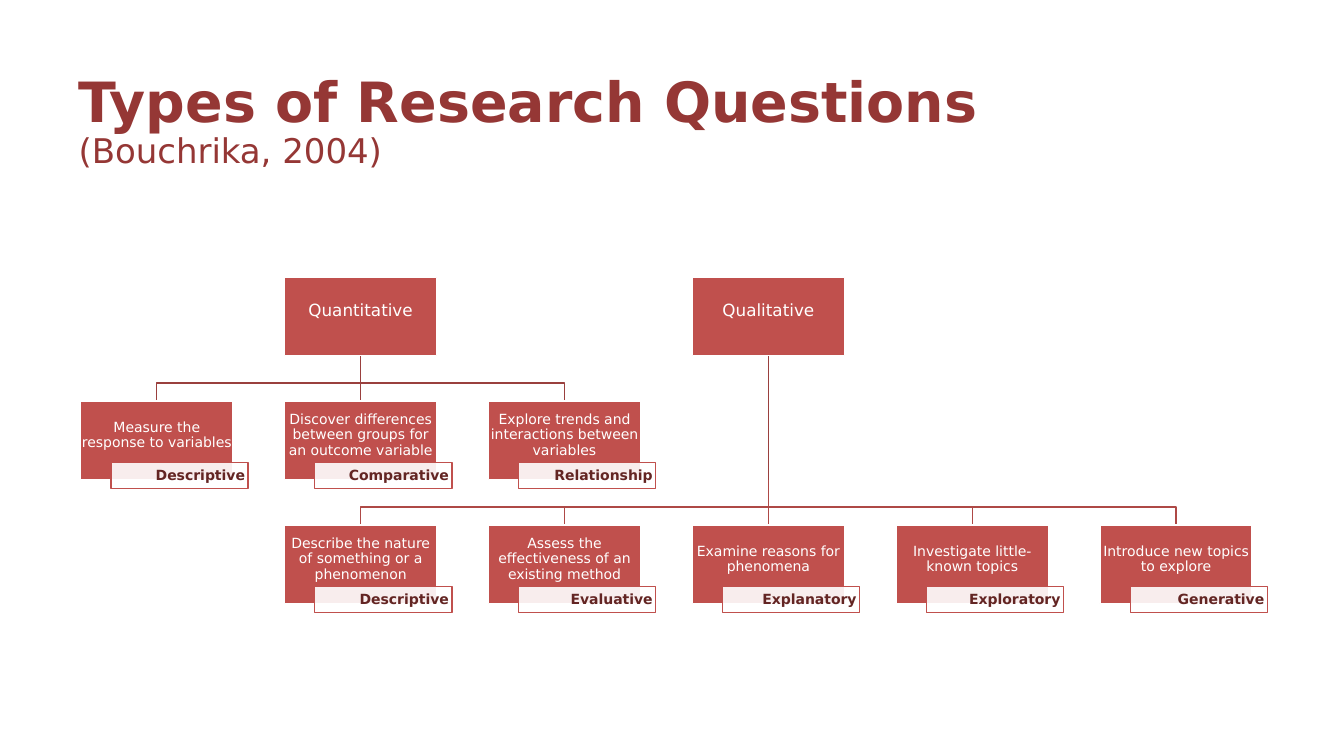
import pptx
import pptx.util
import pptx.dml.color
import pptx.enum.shapes
import pptx.enum.text
import pptx.oxml.ns
import lxml.etree

HUES = {"title": "953735", "box": "C0504D", "white": "FFFFFF",
        "tag": "632523", "upper": "9A403E", "lower": "AE4946"}
FONT = "DejaVu Sans"
WIDE, HIGH = 13.33, 7.5
BOX_W, BOX_H = 1.51, 0.78
COLS, ROWS = 6, 3
ALIGN = pptx.enum.text.PP_ALIGN
MID = pptx.enum.text.MSO_ANCHOR.MIDDLE
INCH = pptx.util.Inches

QUANT = [("Measure the response to variables", "Descriptive"),
         ("Discover differences between groups for an outcome variable", "Comparative"),
         ("Explore trends and interactions between variables", "Relationship")]
QUAL = [("Describe the nature of something or a phenomenon", "Descriptive"),
        ("Assess the effectiveness of an existing method", "Evaluative"),
        ("Examine reasons for phenomena", "Explanatory"),
        ("Investigate little-known topics", "Exploratory"),
        ("Introduce new topics to explore", "Generative")]


def color(name):
    return pptx.dml.color.RGBColor.from_string(HUES[name])


def apply(item, form):
    for key, val in form.items():
        setattr(item, key, val)


def add_run(para, text, size, hue, bold=False):
    run = para.add_run()
    run.text = text
    apply(run.font, {"name": FONT, "size": pptx.util.Pt(size), "bold": bold})
    run.font.color.rgb = color(hue)


def add_title(slide, box):
    title = slide.shapes.title
    apply(title, dict(zip(("left", "top", "width", "height"), map(INCH, box))))
    apply(title.text_frame, {"vertical_anchor": MID, "word_wrap": True})
    para = title.text_frame.paragraphs[0]
    apply(para, {"alignment": ALIGN.LEFT, "line_spacing": 0.9})
    add_run(para, "Types of Research Questions", 39.6, "title", True)
    para.add_line_break()
    add_run(para, "(Bouchrika, 2004)", 24.3, "title")


def add_rect(slide, box, text, size, fill, line, ink, align, pads, bold=False):
    rect = slide.shapes.add_shape(
        pptx.enum.shapes.MSO_SHAPE.RECTANGLE, *map(INCH, box))
    rect.shadow.inherit = False
    rect.fill.solid()
    rect.fill.fore_color.rgb = color(fill)
    rect.line.color.rgb = color(line)
    rect.line.width = pptx.util.Pt(1)
    frame = rect.text_frame
    sides = ("margin_left", "margin_top", "margin_right", "margin_bottom")
    apply(frame, dict(zip(sides, map(INCH, pads))))
    apply(frame, {"vertical_anchor": MID, "word_wrap": True})
    para = frame.paragraphs[0]
    apply(para, {"alignment": align, "line_spacing": 0.9})
    add_run(para, text, size, ink, bold)
    return rect


def add_node(slide, spot, text, size):
    add_rect(slide, (*spot, BOX_W, BOX_H), text, size, "box", "white", "white",
             ALIGN.CENTER, (0.01, 0.01, 0.01, 0.11))


def add_tag(slide, spot, text):
    left, top = spot
    tag = add_rect(slide, (left + 0.3, top + 0.61, 1.36, 0.26), text, 10,
                   "white", "box", "tag", ALIGN.RIGHT,
                   (0.03, 0.01, 0.03, 0.01), True)
    fill = tag.element.spPr.find(pptx.oxml.ns.qn("a:solidFill"))[0]
    alpha = lxml.etree.SubElement(fill, pptx.oxml.ns.qn("a:alpha"))
    alpha.set("val", "90000")


def add_line(slide, start, end, hue):
    x1, y1, x2, y2 = map(INCH, (*start, *end))
    if x1 == x2:
        line = slide.shapes.add_connector(
            pptx.enum.shapes.MSO_CONNECTOR.STRAIGHT, x1, y1, x2, y2)
        lxml.etree.SubElement(line.element.spPr, pptx.oxml.ns.qn("a:effectLst"))
    else:
        bend = y2 - INCH(0.18)
        form = slide.shapes.build_freeform(x1, y1)
        form.add_line_segments([(x1, bend), (x2, bend), (x2, y2)], close=False)
        line = form.convert_to_shape()
        line.fill.background()
        line.shadow.inherit = False
    line.line.color.rgb = color(hue)
    line.line.width = pptx.util.Pt(1)


def add_tree(slide, box, head, col, first, row, leaves, hue):
    left, top, width, height = box
    step = (width - BOX_W) / (COLS - 1)
    drop = (height - BOX_H) / (ROWS - 1)

    def spot(across, down):
        return left + across * step, top + down * drop

    def foot(across, down):
        x, y = spot(across, down)
        return x + BOX_W / 2, y + BOX_H

    root = foot(col, row - 1)
    if row > 1:
        add_line(slide, foot(col, 0), root, "upper")
    spots = [spot(first + i, row) for i in range(len(leaves))]
    for x, y in spots:
        add_line(slide, root, (x + BOX_W / 2, y), hue)
    add_node(slide, spot(col, 0), head, 12)
    for place, (text, tag) in zip(spots, leaves):
        add_node(slide, place, text, 10)
        add_tag(slide, place, tag)


def main():
    deck = pptx.Presentation()
    apply(deck, {"slide_width": INCH(WIDE), "slide_height": INCH(HIGH)})
    slide = deck.slides.add_slide(deck.slide_layouts[5])
    add_title(slide, (0.68, 0.68, 12.01, 1.08))
    area = (0.8, 2.75, 11.62, 3.24)
    add_tree(slide, area, "Quantitative", 1, 0, 1, QUANT, "upper")
    add_tree(slide, area, "Qualitative", 3, 1, 2, QUAL, "lower")
    deck.save("out.pptx")


if __name__ == "__main__":
    main()
